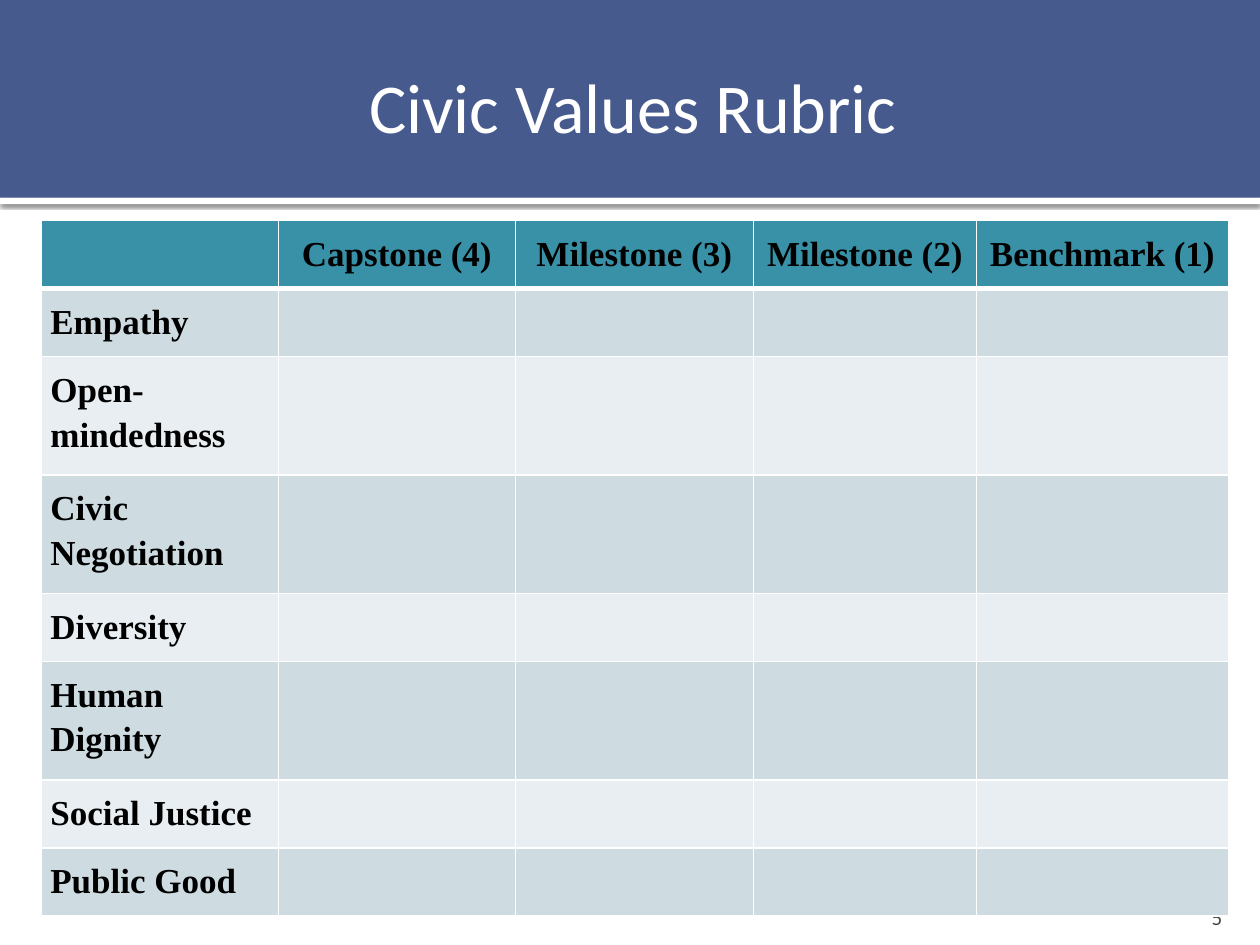
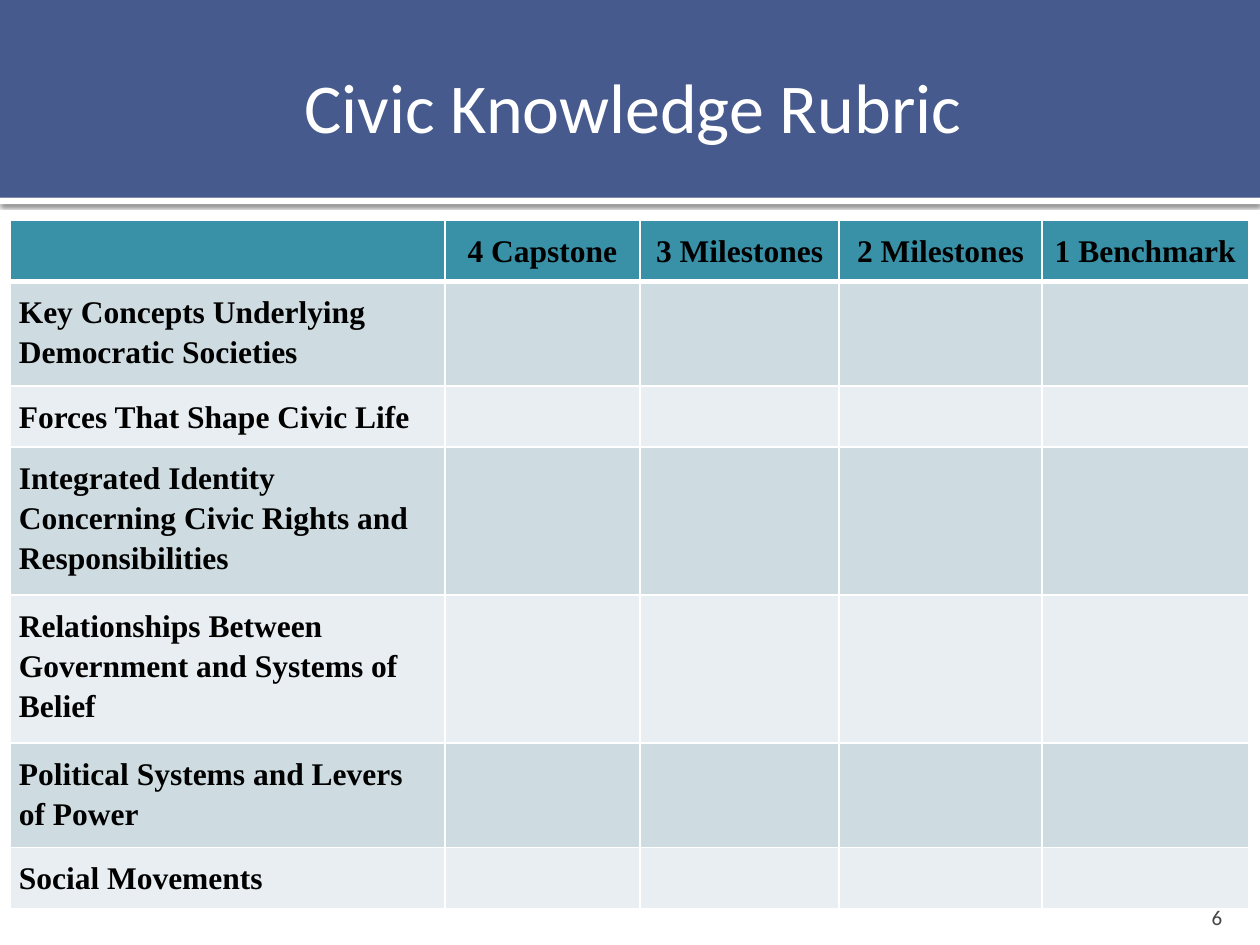
from lxml import etree
from pptx import Presentation
from pptx.dml.color import RGBColor
from pptx.enum.shapes import MSO_SHAPE
from pptx.enum.text import MSO_ANCHOR, PP_ALIGN
from pptx.oxml.ns import qn
from pptx.util import Inches, Pt

# Each criterion is paired with the number of text lines it takes.
RUBRICS = [
    {
        "title": "Civic Values Rubric",
        "number": 5,
        "levels": ["Capstone (4)", "Milestone (3)", "Milestone (2)", "Benchmark (1)"],
        "criteria": [
            ("Empathy", 1),
            ("Open-\nmindedness", 2),
            ("Civic Negotiation", 2),
            ("Diversity", 1),
            ("Human Dignity", 2),
            ("Social Justice", 1),
            ("Public Good", 1),
        ],
        "left": 0.33,
        "columns": [1.88, 1.88, 1.89, 1.77, 2],
        "size": 20,
        "line_height": 0.4,
    },
    {
        "title": "Civic Knowledge Rubric",
        "number": 6,
        "levels": ["4 Capstone", "3 Milestones", "2 Milestones", "1 Benchmark"],
        "criteria": [
            ("Key Concepts Underlying Democratic Societies", 2),
            ("Forces That Shape Civic Life", 1),
            ("Integrated Identity Concerning Civic Rights and Responsibilities", 3),
            ("Relationships Between Government and Systems of Belief", 3),
            ("Political Systems and Levers of Power", 2),
            ("Social Movements", 1),
        ],
        "left": 0.08,
        "columns": [3.45, 1.55, 1.58, 1.61, 1.64],
        "size": 18,
        "line_height": 0.31,
    },
]

WHITE = RGBColor(0xFF, 0xFF, 0xFF)
BLACK = RGBColor(0, 0, 0)
NAVY = RGBColor(0x47, 0x5A, 0x8D)
GREY = RGBColor(0x45, 0x45, 0x45)
TEAL = RGBColor(0x38, 0x91, 0xA7)
ROW_FILLS = [RGBColor(0xCE, 0xDC, 0xE1), RGBColor(0xE8, 0xEE, 0xF1)]

LEFT, CENTER, RIGHT = PP_ALIGN.LEFT, PP_ALIGN.CENTER, PP_ALIGN.RIGHT
MIDDLE, BOTTOM = MSO_ANCHOR.MIDDLE, MSO_ANCHOR.BOTTOM
RECTANGLE = MSO_SHAPE.RECTANGLE

SLIDE_WIDTH, SLIDE_HEIGHT = 10, 7.5
BAND_HEIGHT = 1.57
TABLE_TOP = 1.75
CELL_MARGIN = 0.07
THIN, THICK = 1, 3

TITLE_FONT = {"name": "Calibri", "size": Pt(40)}
NUMBER_FONT = {"name": "Calibri", "size": Pt(12)}
CELL_FONT = {"name": "Times New Roman", "bold": True}


def set_margins(target, left, top, right, bottom):
    margins = {"left": left, "top": top, "right": right, "bottom": bottom}
    for side, value in margins.items():
        setattr(target, f"margin_{side}", Inches(value))


def write(frame, text, font, color, align):
    frame.text = text
    for paragraph in frame.paragraphs:
        paragraph.alignment = align
        for run in paragraph.runs:
            for name, value in font.items():
                setattr(run.font, name, value)
            run.font.color.rgb = color


def add_text(slide, text, box, font, color, align, anchor, margins):
    frame = slide.shapes.add_textbox(*map(Inches, box)).text_frame
    frame.word_wrap = True
    frame.vertical_anchor = anchor
    set_margins(frame, *margins)
    write(frame, text, font, color, align)


def add_band(slide, top, height, color):
    band = slide.shapes.add_shape(
        RECTANGLE, 0, Inches(top), Inches(SLIDE_WIDTH), Inches(height))
    band.shadow.inherit = False
    band.fill.solid()
    band.fill.fore_color.rgb = color
    band.line.fill.background()
    return band


def add_drop_shadow(shape):
    effects = shape.element.spPr.find(qn("a:effectLst"))
    shadow = etree.SubElement(
        effects, qn("a:outerShdw"), blurRad=str(Pt(2.5)), dist=str(Pt(0.8)),
        dir="5400000", algn="t", rotWithShape="0")
    color = etree.SubElement(shadow, qn("a:srgbClr"), val=str(BLACK))
    etree.SubElement(color, qn("a:alpha"), val="60000")


def set_borders(cell, top, bottom):
    """Draw white borders; the lines must come before the cell's fill."""
    properties = cell._tc.get_or_add_tcPr()
    widths = {"L": THIN, "R": THIN, "T": top, "B": bottom}
    for position, (side, width) in enumerate(widths.items()):
        line = etree.Element(qn(f"a:ln{side}"), w=str(Pt(width)))
        fill = etree.SubElement(line, qn("a:solidFill"))
        etree.SubElement(fill, qn("a:srgbClr"), val=str(WHITE))
        properties.insert(position, line)


def add_rubric_table(slide, rubric):
    columns = rubric["columns"]
    blanks = [""] * len(rubric["levels"])
    rows = [["", *rubric["levels"]]]
    rows += [[name, *blanks] for name, _ in rubric["criteria"]]
    line_counts = [1] + [lines for _, lines in rubric["criteria"]]
    heights = [lines * rubric["line_height"] + 2 * CELL_MARGIN
               for lines in line_counts]

    table = slide.shapes.add_table(
        len(rows), len(columns), Inches(rubric["left"]), Inches(TABLE_TOP),
        Inches(sum(columns)), Inches(sum(heights))).table
    for column, width in zip(table.columns, columns):
        column.width = Inches(width)

    font = {**CELL_FONT, "size": Pt(rubric["size"])}
    for r, (row, height) in enumerate(zip(rows, heights)):
        table.rows[r].height = Inches(height)
        for c, text in enumerate(row):
            cell = table.cell(r, c)
            cell.fill.solid()
            cell.fill.fore_color.rgb = ROW_FILLS[(r - 1) % 2] if r else TEAL
            set_borders(cell, top=THICK if r == 1 else THIN,
                        bottom=THICK if r == 0 else THIN)
            if text:
                set_margins(cell, *[CELL_MARGIN] * 4)
                write(cell.text_frame, text, font, BLACK, LEFT if r else CENTER)
                for paragraph in cell.text_frame.paragraphs:
                    paragraph.line_spacing = 1.15


def add_rubric_slide(deck, rubric):
    slide = deck.slides.add_slide(deck.slide_layouts[6])
    add_drop_shadow(add_band(slide, BAND_HEIGHT, 0.05, WHITE))
    add_band(slide, 0, BAND_HEIGHT, NAVY)
    add_text(slide, str(rubric["number"]), (9, 7.08, 0.8, 0.3), NUMBER_FONT,
             GREY, RIGHT, BOTTOM, (0.1, 0.05, 0.1, 0))
    add_rubric_table(slide, rubric)
    add_text(slide, rubric["title"], (0.5, 0.17, 9, 1.33), TITLE_FONT,
             WHITE, CENTER, MIDDLE, (0.1, 0.05, 0.05, 0.05))


def main():
    deck = Presentation()
    deck.slide_width = Inches(SLIDE_WIDTH)
    deck.slide_height = Inches(SLIDE_HEIGHT)
    for rubric in RUBRICS:
        add_rubric_slide(deck, rubric)
    deck.save("out.pptx")


if __name__ == "__main__":
    main()
